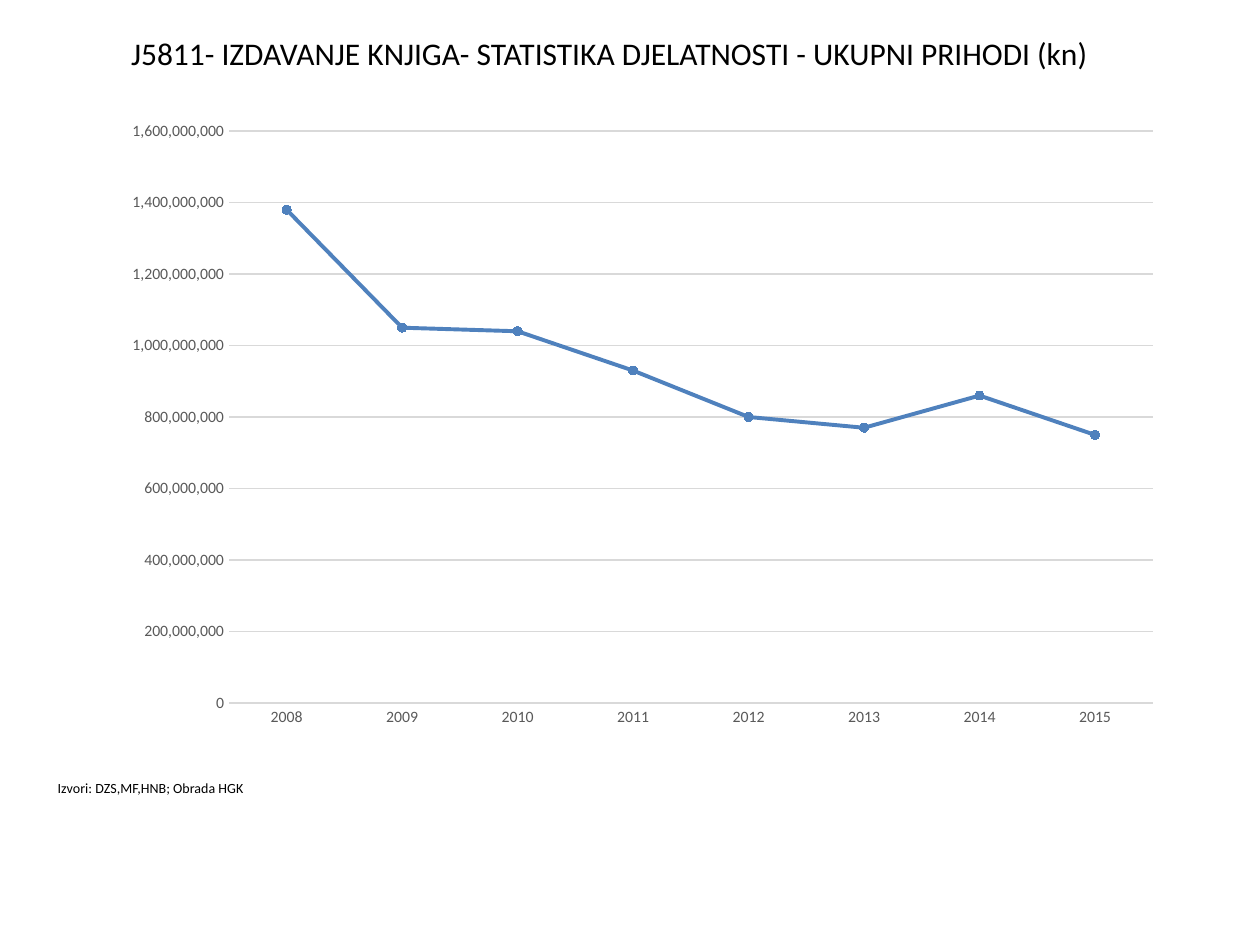
import pptx
import pptx.chart.data
import pptx.dml.color
import pptx.enum.chart
import pptx.enum.text
import pptx.oxml
import pptx.oxml.ns
import pptx.util

Inches, Pt = pptx.util.Inches, pptx.util.Pt
RGBColor = pptx.dml.color.RGBColor
enums = pptx.enum.chart

# Content
TITLE = "J5811- IZDAVANJE KNJIGA- STATISTIKA DJELATNOSTI - UKUPNI PRIHODI (kn)"
SOURCE = "Izvori: DZS,MF,HNB; Obrada HGK"
YEARS = [str(year) for year in range(2008, 2016)]
INCOME = [1380, 1050, 1040, 930, 800, 770, 860, 750]  # millions of kn
PLOT = {"x": 0.141, "y": 0.027, "w": 0.822, "h": 0.866}

FONT = "Calibri"
BLACK = RGBColor(0, 0, 0)
GREY = RGBColor(0x59, 0x59, 0x59)
PALE = RGBColor(0xD9, 0xD9, 0xD9)
BLUE = RGBColor(0x4F, 0x81, 0xBD)


def style(font, size, color):
    font.name, font.size, font.bold = FONT, Pt(size), False
    font.color.rgb = color


def write(shape, text, box, size, color=BLACK):
    shape.left, shape.top, shape.width, shape.height = map(Inches, box)
    frame = shape.text_frame
    frame.word_wrap = True
    frame.auto_size = pptx.enum.text.MSO_AUTO_SIZE.SHAPE_TO_FIT_TEXT
    frame.vertical_anchor = pptx.enum.text.MSO_ANCHOR.TOP
    para = frame.paragraphs[0]
    para.alignment = pptx.enum.text.PP_ALIGN.LEFT
    run = para.add_run()
    run.text = text
    style(run.font, size, color)


def draw(line, color, width):
    line.color.rgb = color
    line.width = Pt(width)


def place(chart, plot):
    """Fix the inner plot area as fractions of the chart."""
    area = chart._chartSpace.chart.plotArea
    for old in area.findall(pptx.oxml.ns.qn("c:layout")):
        area.remove(old)
    modes = "".join(f'<c:{key}Mode val="edge"/>' for key in "xy")
    sizes = "".join(f'<c:{key} val="{val}"/>' for key, val in plot.items())
    area.insert(0, pptx.oxml.parse_xml(
        f'<c:layout {pptx.oxml.ns.nsdecls("c")}><c:manualLayout>'
        f'<c:layoutTarget val="inner"/>{modes}{sizes}'
        '</c:manualLayout></c:layout>'))


deck = pptx.Presentation()
deck.slide_width, deck.slide_height = Inches(10), Inches(7.5)
slide = deck.slides.add_slide(deck.slide_layouts[5])

# Title and source note
write(slide.shapes.title, TITLE, (0.94, 0.22, 8.41, 0.4), 18)
note = slide.shapes.add_textbox(0, 0, 0, 0)
write(note, SOURCE, (0.36, 6.14, 6.13, 0.24), 8)

# Income chart
data = pptx.chart.data.CategoryChartData(number_format="#,##0")
data.categories = YEARS
data.add_series("Series 1", [value * 1_000_000 for value in INCOME])
chart = slide.shapes.add_chart(
    enums.XL_CHART_TYPE.LINE_MARKERS,
    *map(Inches, (0.56, 0.9, 8.92, 5.24)), data).chart
chart.has_title = chart.has_legend = False
style(chart.font, 10, BLACK)
place(chart, PLOT)

# Axes
years, money = chart.category_axis, chart.value_axis
for axis in (years, money):
    axis.major_tick_mark = axis.minor_tick_mark = enums.XL_TICK_MARK.NONE
    style(axis.tick_labels.font, 9, GREY)
draw(years.format.line, PALE, 0.75)
money.format.line.fill.background()
money.has_major_gridlines = True
draw(money.major_gridlines.format.line, PALE, 0.75)
money.minimum_scale, money.maximum_scale = 0, 1_600_000_000
money.major_unit = 200_000_000
money.tick_labels.number_format = "#,##0"
money.tick_labels.number_format_is_linked = False

# Line and markers
chart.plots[0].vary_by_categories = False
series = chart.plots[0].series[0]
series.smooth = False
draw(series.format.line, BLUE, 2.25)
marker = series.marker
marker.style, marker.size = enums.XL_MARKER_STYLE.CIRCLE, 5
marker.format.fill.solid()
marker.format.fill.fore_color.rgb = BLUE
draw(marker.format.line, BLUE, 0.75)

deck.save("out.pptx")
